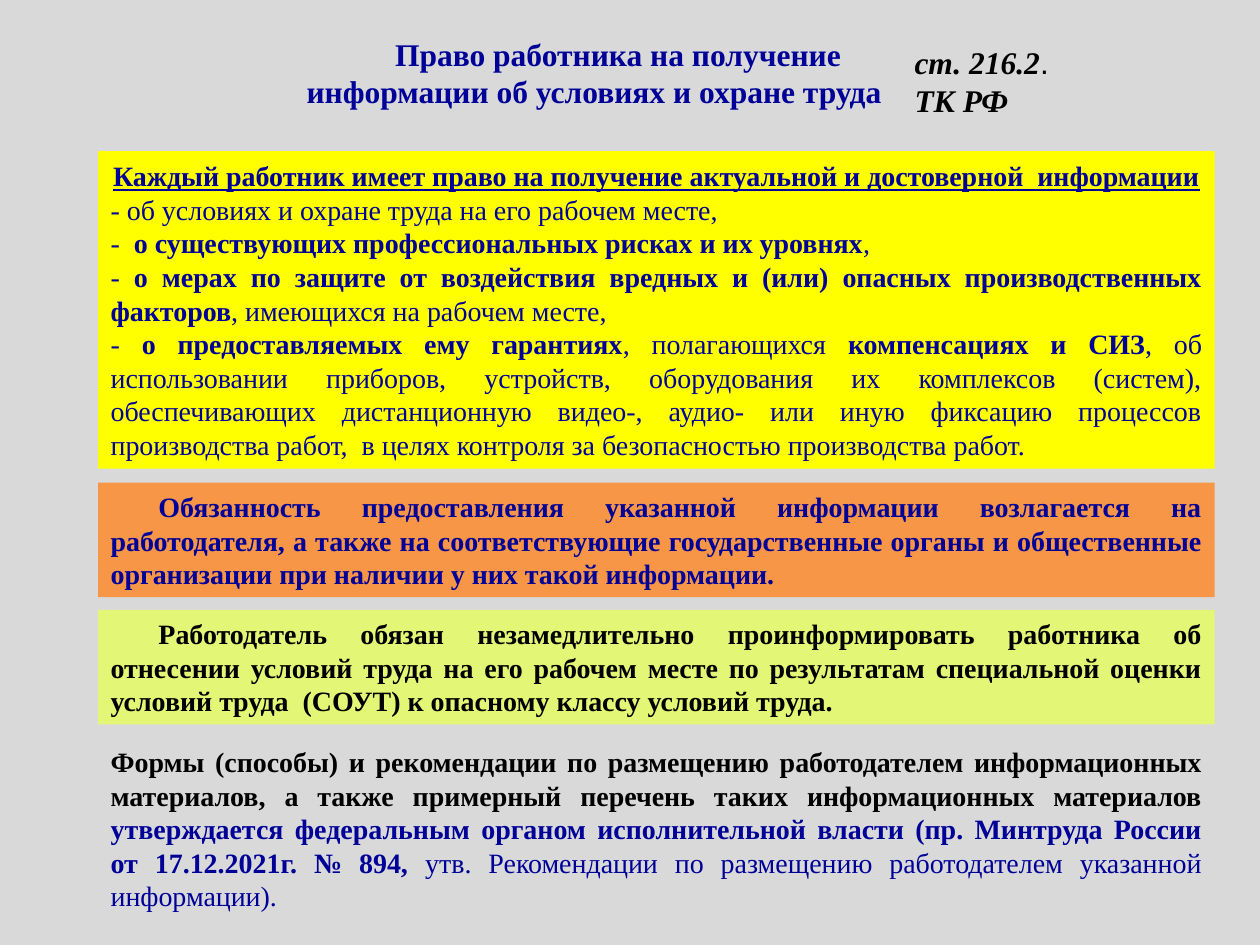
from pptx import Presentation
from pptx.dml.color import RGBColor
from pptx.enum import shapes, text
from pptx.util import Inches, Pt

GREY = RGBColor(0xD9, 0xD9, 0xD9)
NAVY = RGBColor(0x00, 0x00, 0x99)
BLACK = RGBColor(0x00, 0x00, 0x00)
YELLOW = RGBColor(0xFF, 0xFF, 0x00)
ORANGE = RGBColor(0xF7, 0x96, 0x46)
LIME = RGBColor(0xE4, 0xF6, 0x76)
SERIF = "Times New Roman"
LEFT, WIDTH = 0.78, 8.86
CENTER, JUSTIFY = text.PP_ALIGN.CENTER, text.PP_ALIGN.JUSTIFY
TOP, MIDDLE = text.MSO_ANCHOR.TOP, text.MSO_ANCHOR.MIDDLE

prs = Presentation()
prs.slide_width, prs.slide_height = Inches(10), Inches(7.5)
slide = prs.slides.add_slide(prs.slide_layouts[6])
slide.background.fill.solid()
slide.background.fill.fore_color.rgb = GREY


def add_box(left, top, width, height, fill=None):
    area = [Inches(v) for v in (left, top, width, height)]
    if fill is None:
        return slide.shapes.add_textbox(*area)
    box = slide.shapes.add_shape(shapes.MSO_SHAPE.RECTANGLE, *area)
    box.shadow.inherit = False
    box.fill.solid()
    box.fill.fore_color.rgb = fill
    box.line.fill.background()
    return box


def write(box, paras, size, color, align=JUSTIFY, anchor=TOP, first=0, left=0):
    """Fill a box with paragraphs, each a list of (wording, bold) runs."""
    frame = box.text_frame
    frame.word_wrap = True
    frame.vertical_anchor = anchor
    for i, runs in enumerate(paras):
        para = frame.paragraphs[0] if i == 0 else frame.add_paragraph()
        para.alignment = align
        props = para._p.get_or_add_pPr()
        props.set("marL", str(Inches(left)))
        props.set("indent", str(Inches(first)))
        for words, bold in runs:
            run = para.add_run()
            run.text = words
            run.font.name = SERIF
            run.font.size = Pt(size)
            run.font.bold = bold
            run.font.color.rgb = color
    return frame.paragraphs


# Heading and article reference
title = add_box(2.17, 0.22, 5.09, 0.71)
write(title, [[("Право работника на получение информации об условиях и охране труда", True)]],
      18, NAVY, CENTER, MIDDLE, first=0.38)

law = add_box(6.97, 0.29, 1.73, 0.71)
lines = write(law, [[("ст. 216.2", True), (".", False)], [("ТК РФ", True)]],
              18, BLACK, text.PP_ALIGN.LEFT, left=0.19)
for line in lines:
    line.runs[0].font.italic = True
lines[0].runs[1].font.name = "Arial"

# Rights of the worker
rights = add_box(LEFT, 1.2, WIDTH, 2.52, YELLOW)
lines = write(rights, [
    [("Каждый работник имеет право на получение актуальной и достоверной  информации", True)],
    [("- об условиях и охране труда на его рабочем месте,", False)],
    [("-  ", False), ("о существующих профессиональных рисках и их уровнях", True), (",", False)],
    [("- ", False),
     ("о мерах по защите от воздействия вредных и (или) опасных производственных факторов", True),
     (", имеющихся на рабочем месте,", False)],
    [("- ", False), ("о предоставляемых ему гарантиях", True), (", полагающихся ", False),
     ("компенсациях и СИЗ", True),
     (", об использовании приборов, устройств, оборудования их комплексов (систем), "
      "обеспечивающих дистанционную видео-, аудио- или иную фиксацию процессов "
      "производства работ,  в целях контроля за безопасностью производства работ.", False)],
], 16, NAVY, anchor=MIDDLE)
lines[0].alignment = CENTER
lines[0].runs[0].font.underline = True

# Duties of the employer
duties = [
    (3.83, ORANGE, NAVY,
     "Обязанность предоставления указанной информации возлагается на работодателя, "
     "а также на соответствующие государственные органы и общественные организации "
     "при наличии у них такой информации."),
    (4.84, LIME, BLACK,
     "Работодатель обязан незамедлительно проинформировать работника об отнесении "
     "условий труда на его рабочем месте по результатам специальной оценки условий "
     "труда  (СОУТ) к опасному классу условий труда."),
]
for top, fill, color, words in duties:
    duty = add_box(LEFT, top, WIDTH, 0.91, fill)
    write(duty, [[(words, True)]], 16, color, anchor=MIDDLE, first=0.38)

# Forms and recommendations
forms = add_box(LEFT, 5.86, WIDTH, 1.45)
lines = write(forms, [[
    ("Формы (способы) и рекомендации по размещению работодателем информационных "
     "материалов, а также примерный перечень таких информационных материалов ", True),
    ("утверждается федеральным органом исполнительной власти (пр. Минтруда России "
     "от 17.12.2021г. № 894, ", True),
    ("утв. Рекомендации по размещению работодателем указанной информации).", False),
]], 16, NAVY)
lines[0].runs[0].font.color.rgb = BLACK

prs.save("out.pptx")
